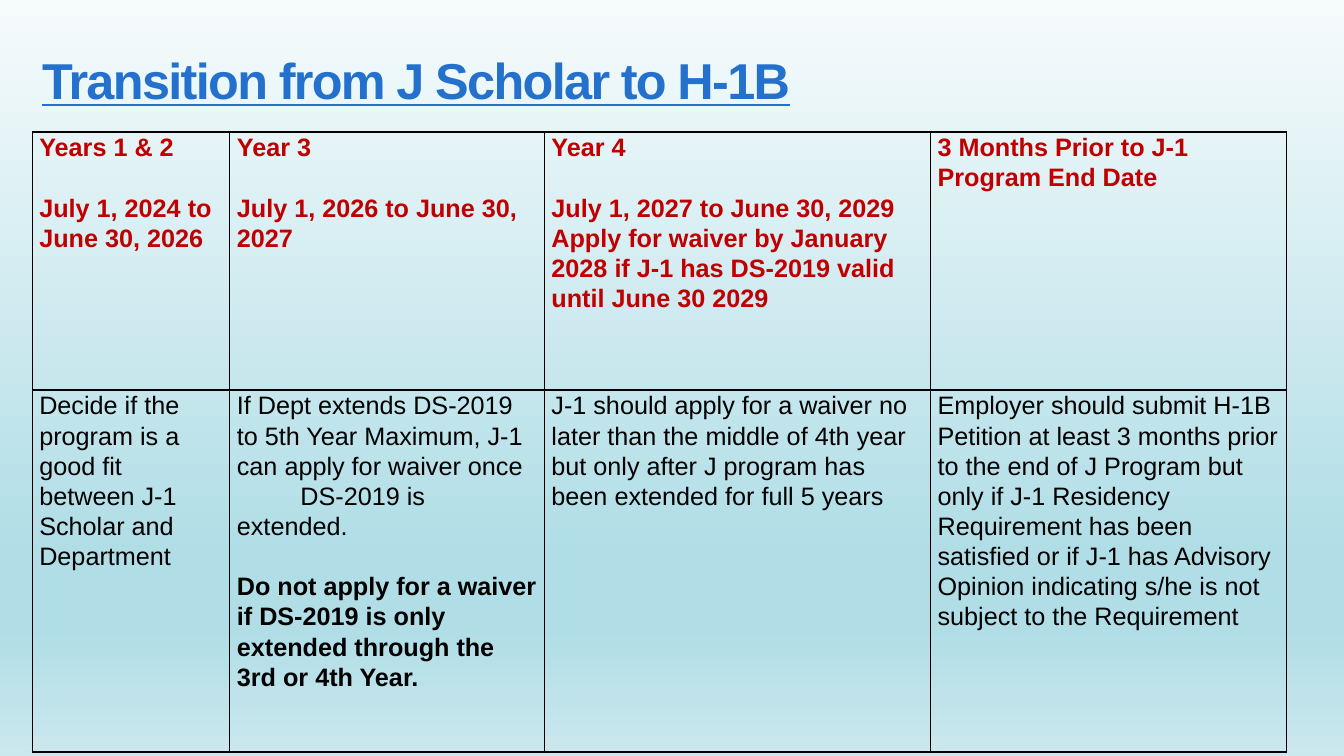
from dataclasses import dataclass

from lxml.etree import SubElement
from pptx import Presentation
from pptx.dml.color import RGBColor
from pptx.enum.text import MSO_ANCHOR
from pptx.oxml.ns import qn
from pptx.util import Inches, Pt

TITLE_BLUE = RGBColor(0x23, 0x70, 0xCD)
HEADING_RED = RGBColor(0xC0, 0x00, 0x00)
BLACK = RGBColor(0x00, 0x00, 0x00)
SKY_PALE = RGBColor(0xF6, 0xFB, 0xFC)
SKY_DEEP = RGBColor(0xB0, 0xDD, 0xE6)
SKY_LIGHT = RGBColor(0xCB, 0xE8, 0xEE)
SKY_STOPS = [(0, SKY_PALE), (74, SKY_DEEP), (83, SKY_DEEP), (100, SKY_LIGHT)]

COLUMN_WIDTHS = [1.96, 3.12, 3.83, 3.53]
ROW_HEIGHTS = [2.56, 3.59]
BLOCK_GAP = 21.5


@dataclass
class Passage:
    text: str
    bold: bool = False
    gap: float = 0
    indent: float = 0


@dataclass
class Stage:
    heading: list[Passage]
    advice: list[Passage]


STAGES = [
    Stage(
        [Passage("Years 1 & 2", True),
         Passage("July 1, 2024 to June 30, 2026", True, BLOCK_GAP)],
        [Passage("Decide if the program is a good fit between J-1 Scholar and Department")],
    ),
    Stage(
        [Passage("Year 3", True),
         Passage("July 1, 2026 to June 30, 2027", True, BLOCK_GAP)],
        [Passage("If Dept extends DS-2019 to 5th Year Maximum, J-1 can apply for waiver once"),
         Passage("DS-2019 is extended.", indent=0.63),
         Passage("Do not apply for a waiver if DS-2019 is only extended through "
                 "the 3rd or 4th Year.", True, BLOCK_GAP)],
    ),
    Stage(
        [Passage("Year 4", True),
         Passage("July 1, 2027 to June 30, 2029", True, BLOCK_GAP),
         Passage("Apply for waiver by January 2028 if J-1 has DS-2019 valid "
                 "until June 30 2029", True)],
        [Passage("J-1 should apply for a waiver no later than the middle of 4th year "
                 "but only after J program has been extended for full 5 years")],
    ),
    Stage(
        [Passage("3 Months Prior to J-1 Program End Date", True)],
        [Passage("Employer should submit H-1B Petition at least 3 months prior to the end "
                 "of J Program but only if J-1 Residency Requirement has been satisfied or "
                 "if J-1 has Advisory Opinion indicating s/he is not subject to the "
                 "Requirement")],
    ),
]


def write(paragraph, text: str, *, size: float, color: RGBColor, bold: bool = False,
          underline: bool = False, line_spacing: float = 1.07, gap: float = 0,
          indent: float = 0, tracking: float = 0) -> None:
    paragraph.line_spacing = line_spacing
    paragraph.space_before = Pt(gap)
    if indent:
        paragraph._p.get_or_add_pPr().set("indent", str(Inches(indent)))
    run = paragraph.add_run()
    run.text = text
    font = run.font
    font.name = "Arial"
    font.size = Pt(size)
    font.bold = bold
    font.underline = underline
    font.color.rgb = color
    if tracking:
        run._r.get_or_add_rPr().set("spc", str(round(tracking * 100)))


def paint_background(slide) -> None:
    fill = slide.background.fill
    fill.gradient()
    fill.gradient_angle = 270
    stops = next(slide.element.iter(qn("a:gsLst")))
    for stop in list(stops):
        stops.remove(stop)
    for percent, color in SKY_STOPS:
        stop = SubElement(stops, qn("a:gs"), pos=str(percent * 1000))
        SubElement(stop, qn("a:srgbClr"), val=str(color))


def outline_cell(cell) -> None:
    properties = cell._tc.get_or_add_tcPr()
    for position, side in enumerate(("a:lnL", "a:lnR", "a:lnT", "a:lnB")):
        border = SubElement(properties, qn(side), w=str(Pt(1)))
        solid = SubElement(border, qn("a:solidFill"))
        SubElement(solid, qn("a:srgbClr"), val=str(BLACK))
        properties.insert(position, border)


def fill_cell(cell, passages: list[Passage], color: RGBColor) -> None:
    cell.fill.background()
    outline_cell(cell)
    cell.margin_left = cell.margin_right = Inches(0.07)
    cell.margin_top = cell.margin_bottom = 0
    cell.vertical_anchor = MSO_ANCHOR.TOP
    frame = cell.text_frame
    for index, passage in enumerate(passages):
        paragraph = frame.add_paragraph() if index else frame.paragraphs[0]
        write(paragraph, passage.text, size=18, color=color, bold=passage.bold,
              gap=passage.gap, indent=passage.indent)


def add_title(slide) -> None:
    title = slide.shapes.add_textbox(Inches(0.32), Inches(0.5), Inches(10.61), Inches(0.67))
    frame = title.text_frame
    frame.word_wrap = True
    frame.vertical_anchor = MSO_ANCHOR.MIDDLE
    write(frame.paragraphs[0], "Transition from J Scholar to H-1B", size=36,
          color=TITLE_BLUE, bold=True, underline=True, line_spacing=0.85, tracking=-1.2)


def add_timeline(slide) -> None:
    timeline = slide.shapes.add_table(
        len(ROW_HEIGHTS), len(STAGES), Inches(0.32), Inches(1.31),
        Inches(sum(COLUMN_WIDTHS)), Inches(sum(ROW_HEIGHTS))).table
    timeline.first_row = False
    timeline.horz_banding = False
    for row, height in zip(timeline.rows, ROW_HEIGHTS):
        row.height = Inches(height)
    for index, (stage, width) in enumerate(zip(STAGES, COLUMN_WIDTHS)):
        timeline.columns[index].width = Inches(width)
        fill_cell(timeline.cell(0, index), stage.heading, HEADING_RED)
        fill_cell(timeline.cell(1, index), stage.advice, BLACK)


def main() -> None:
    presentation = Presentation()
    presentation.slide_width = Inches(13.33)
    presentation.slide_height = Inches(7.5)
    slide = presentation.slides.add_slide(presentation.slide_layouts[6])
    paint_background(slide)
    add_title(slide)
    add_timeline(slide)
    presentation.save("out.pptx")


if __name__ == "__main__":
    main()
